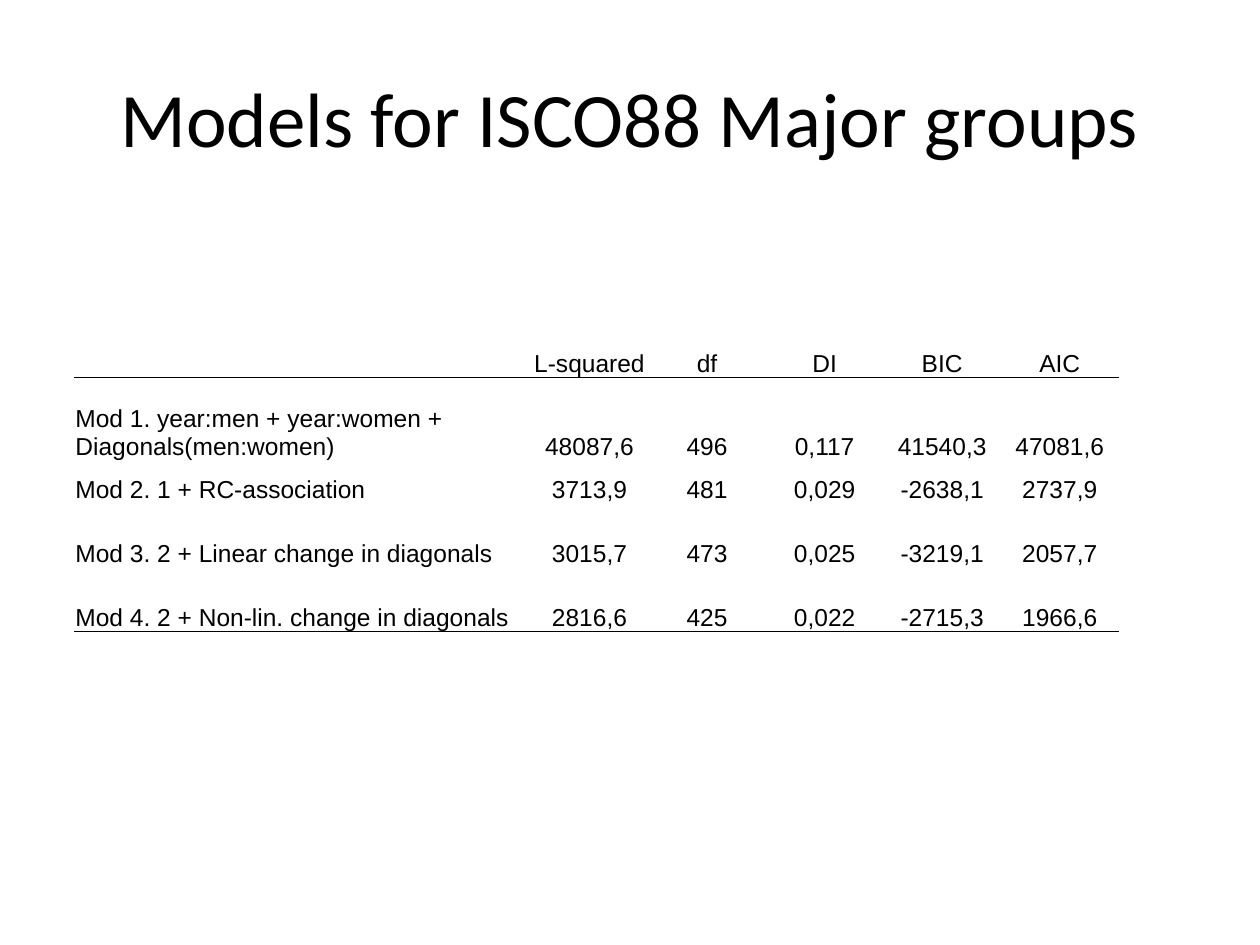
from lxml.etree import SubElement
from pptx import Presentation
from pptx.dml.color import RGBColor
from pptx.enum.text import MSO_ANCHOR, PP_ALIGN
from pptx.oxml.ns import qn
from pptx.util import Cm, Pt

COLORS = {"text": "000000", "rule": "000000"}
ROWS = [
    ["", "L-squared", "df", "DI", "BIC", "AIC"],
    ["Mod 1. year:men + year:women + Diagonals(men:women)", "48087,6", "496", "0,117", "41540,3", "47081,6"],
    ["Mod 2. 1 + RC-association", "3713,9", "481", "0,029", "-2638,1", "2737,9"],
    ["Mod 3. 2 + Linear change in diagonals", "3015,7", "473", "0,025", "-3219,1", "2057,7"],
    ["Mod 4. 2 + Non-lin. change in diagonals", "2816,6", "425", "0,022", "-2715,3", "1966,6"],
]
COLUMN_WIDTHS = [9.2] + [2.37] * 5
ROW_HEIGHTS = [1.29, 1.67, 0.87, 1.29, 1.29]
CELL_FORMAT = {
    "margin_left": Cm(0.02),
    "margin_right": Cm(0.02),
    "margin_top": Cm(0.02),
    "margin_bottom": Cm(0),
    "vertical_anchor": MSO_ANCHOR.BOTTOM,
}
TITLE_FORMAT = {"left": Cm(1.27), "top": Cm(0.76), "width": Cm(22.86), "height": Cm(3.18)}


def format_text(paragraph, font_name, size, alignment):
    paragraph.alignment = alignment
    for run in paragraph.runs:
        run.font.name = font_name
        run.font.size = Pt(size)
        run.font.color.rgb = RGBColor.from_string(COLORS["text"])


def set_borders(cell, ruled_sides):
    properties = cell._tc.get_or_add_tcPr()
    for side in "LRTB":
        line = SubElement(properties, qn(f"a:ln{side}"), w=str(Pt(0.5)))
        if side in ruled_sides:
            fill = SubElement(line, qn("a:solidFill"))
            SubElement(fill, qn("a:srgbClr"), val=COLORS["rule"])
        else:
            SubElement(line, qn("a:noFill"))


presentation = Presentation()
presentation.slide_width = Cm(25.4)
presentation.slide_height = Cm(19.05)
slide = presentation.slides.add_slide(presentation.slide_layouts[5])

title = slide.shapes.title
for name, value in TITLE_FORMAT.items():
    setattr(title, name, value)
title.text_frame.text = "Models for ISCO88 Major groups"
title.text_frame.vertical_anchor = MSO_ANCHOR.MIDDLE
format_text(title.text_frame.paragraphs[0], "Calibri", 44, PP_ALIGN.CENTER)

table = slide.shapes.add_table(
    len(ROWS), len(COLUMN_WIDTHS), Cm(1.5), Cm(6.32),
    Cm(sum(COLUMN_WIDTHS)), Cm(sum(ROW_HEIGHTS)),
).table
table.first_row = False
table.horz_banding = False
for column, width in zip(table.columns, COLUMN_WIDTHS):
    column.width = Cm(width)
for row, height in zip(table.rows, ROW_HEIGHTS):
    row.height = Cm(height)

ruled_sides = {0: "B", 1: "T", len(ROWS) - 1: "B"}
for row_index, values in enumerate(ROWS):
    for column_index, value in enumerate(values):
        cell = table.cell(row_index, column_index)
        cell.text = value
        for name, setting in CELL_FORMAT.items():
            setattr(cell, name, setting)
        alignment = PP_ALIGN.CENTER if column_index else PP_ALIGN.LEFT
        format_text(cell.text_frame.paragraphs[0], "Arial", 14, alignment)
        set_borders(cell, ruled_sides.get(row_index, ""))
        cell.fill.background()

presentation.save("out.pptx")
